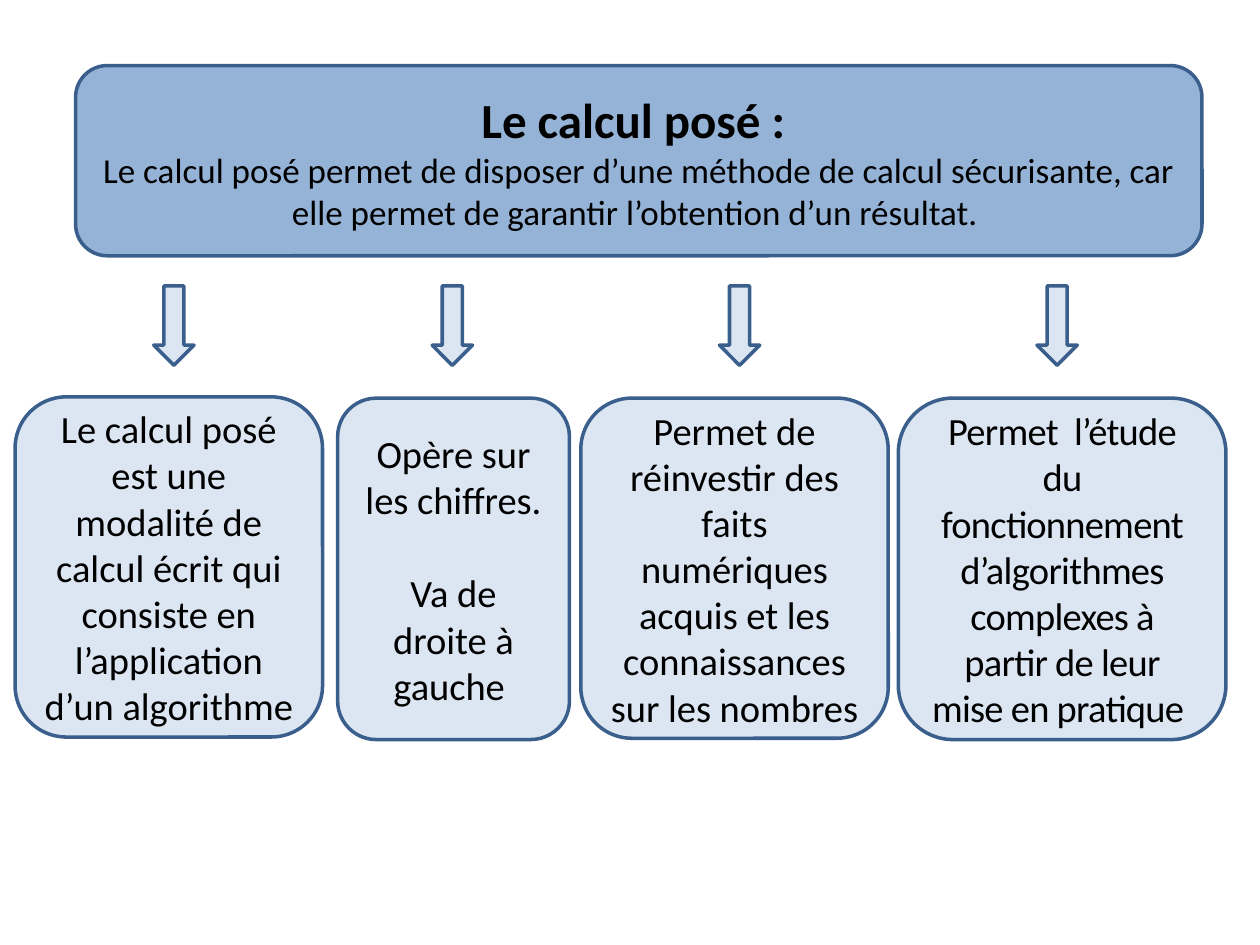
from pptx import Presentation
from pptx.dml.color import RGBColor
from pptx.enum.shapes import MSO_SHAPE as Shape
from pptx.enum.text import MSO_ANCHOR as Anchor, PP_ALIGN as Align
from pptx.util import Inches, Pt

BLUE = RGBColor(0x95, 0xB3, 0xD7)
PALE = RGBColor(0xDC, 0xE6, 0xF2)
EDGE = RGBColor(0x3A, 0x5F, 0x8C)
BLACK = RGBColor(0, 0, 0)

TITLE = "Le calcul posé : "
INTRO = ("Le calcul posé permet de disposer d’une méthode de calcul sécurisante, "
         "car elle permet de garantir l’obtention d’un résultat. ")
CARDS = [
    {"box": (0.12, 3.15, 2.44, 2.7), "arrow": 1.22, "track": 0,
     "lines": ["Le calcul posé est une modalité de calcul écrit qui consiste "
               "en l’application d’un algorithme"]},
    {"box": (2.68, 3.16, 1.84, 2.71), "arrow": 3.43, "track": 0,
     "lines": ["Opère sur les chiffres.", "Va de droite à gauche "]},
    {"box": (4.61, 3.16, 2.44, 2.7), "arrow": 5.71, "track": 0,
     "lines": ["Permet de réinvestir des faits numériques acquis et les "
               "connaissances sur les nombres"]},
    {"box": (7.13, 3.16, 2.6, 2.71), "arrow": 8.23, "track": -40,
     "lines": ["Permet  l’étude du fonctionnement d’algorithmes complexes "
               "à partir de leur mise en pratique "]},
]


def add_block(slide, kind, box, fill):
    block = slide.shapes.add_shape(kind, *map(Inches, box))
    block.shadow.inherit = False
    block.fill.solid()
    block.fill.fore_color.rgb = fill
    block.line.color.rgb = EDGE
    block.line.width = Pt(2)
    return block


def write(block, lines, sizes, gap=0, track=0):
    frame = block.text_frame
    frame.word_wrap = True
    frame.vertical_anchor = Anchor.MIDDLE
    frame.text = "\n".join(lines)
    for i, (para, size) in enumerate(zip(frame.paragraphs, sizes)):
        para.alignment = Align.CENTER
        if i and gap:
            para.space_before = Pt(gap)
        for run in para.runs:
            run.font.name = "Calibri"
            run.font.size = Pt(size)
            run.font.color.rgb = BLACK
            if track:
                run.font._element.set("spc", str(track))


def main():
    deck = Presentation()
    deck.slide_width, deck.slide_height = Inches(10), Inches(7.5)
    slide = deck.slides.add_slide(deck.slide_layouts[6])

    head = add_block(slide, Shape.ROUNDED_RECTANGLE, (0.6, 0.52, 8.94, 1.51), BLUE)
    write(head, [TITLE, INTRO], [28, 20])
    head.text_frame.paragraphs[0].runs[0].font.bold = True

    for card in CARDS:
        add_block(slide, Shape.DOWN_ARROW, (card["arrow"], 2.27, 0.32, 0.63), PALE)
        block = add_block(slide, Shape.ROUNDED_RECTANGLE, card["box"], PALE)
        lines = card["lines"]
        write(block, lines, [22] * len(lines), gap=27, track=card["track"])

    deck.save("out.pptx")


if __name__ == "__main__":
    main()
